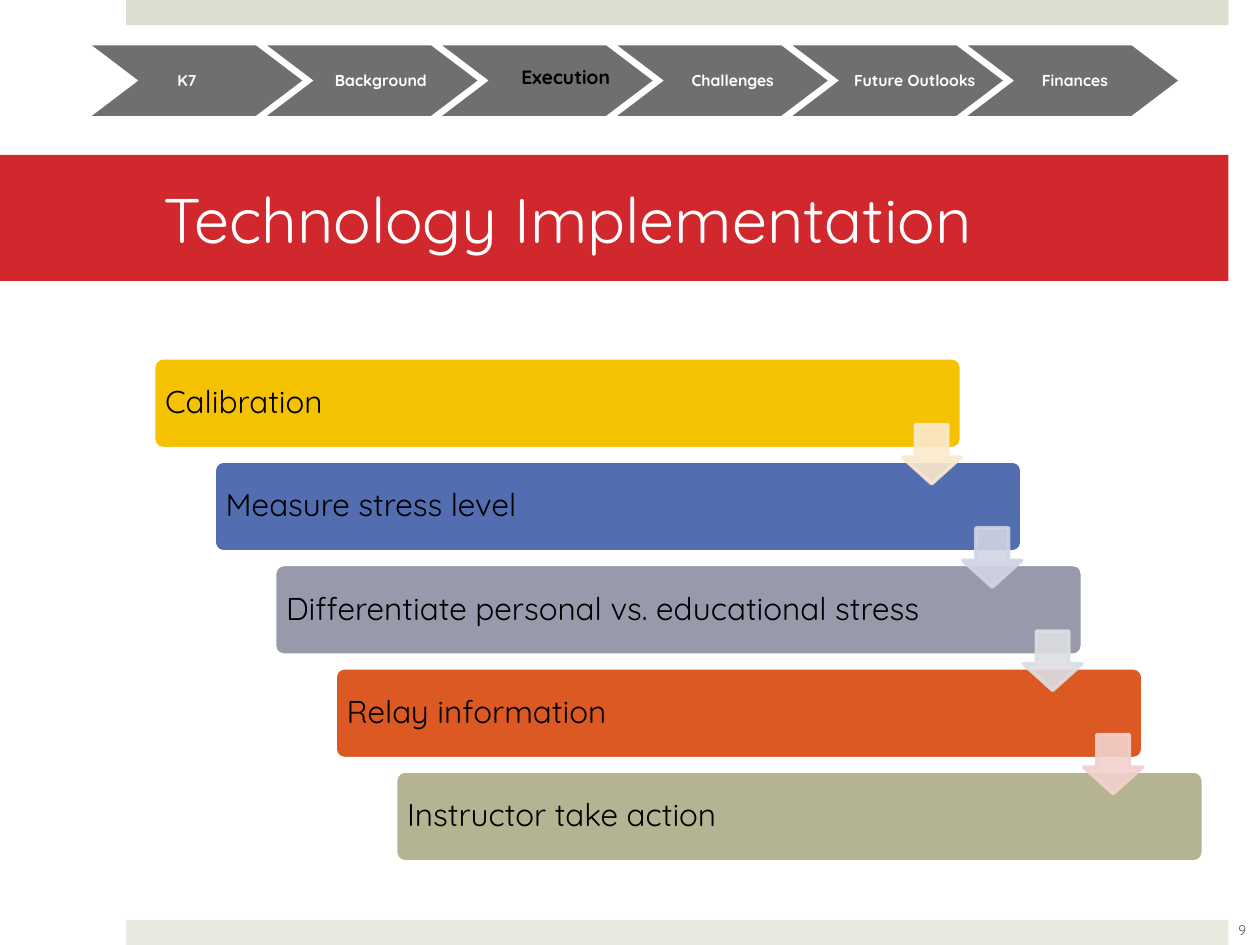
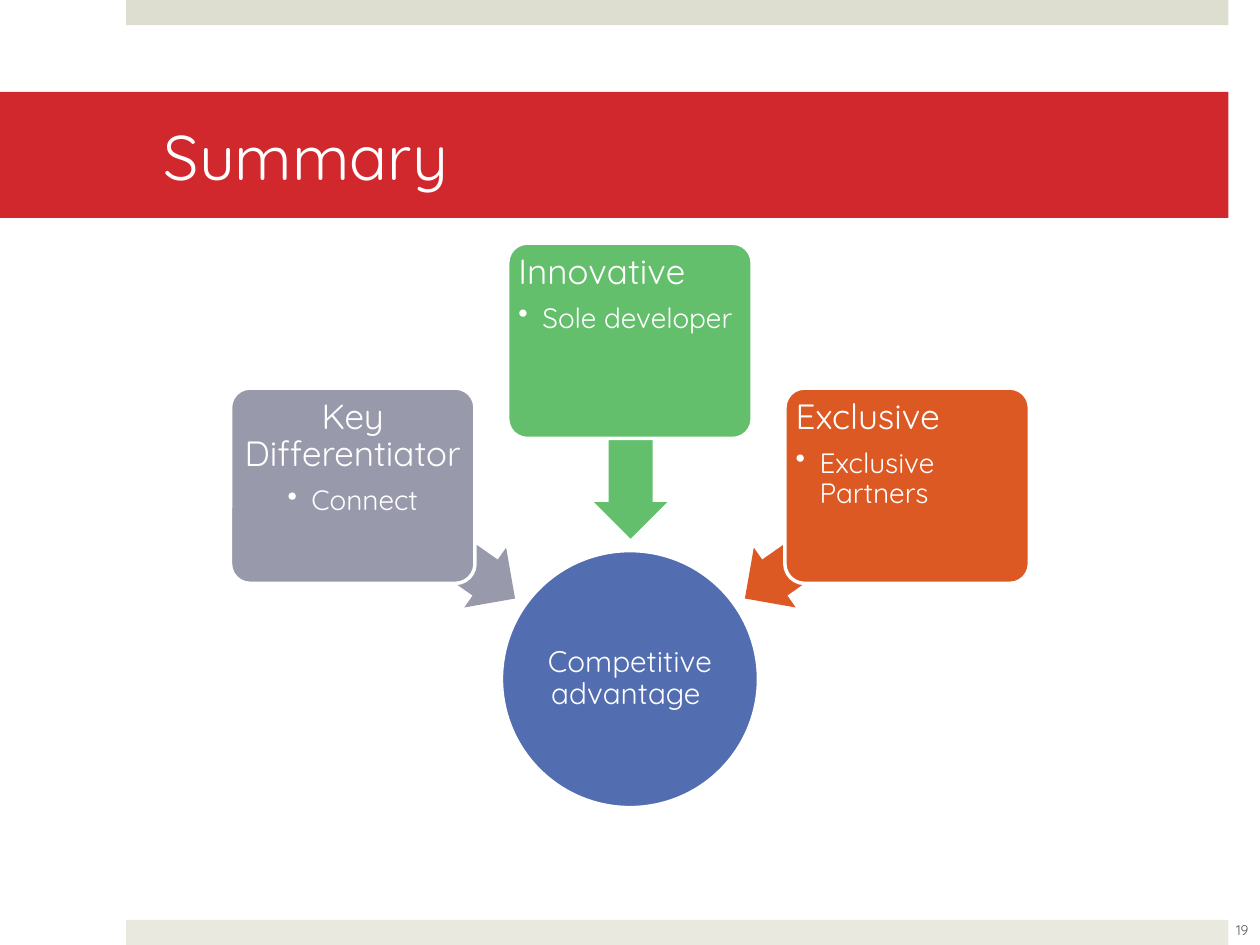
from dataclasses import dataclass

import lxml.etree
import pptx
import pptx.dml.color
import pptx.enum.shapes
import pptx.enum.text
import pptx.oxml.ns
import pptx.util

Inches = pptx.util.Inches
Pt = pptx.util.Pt
MSO = pptx.enum.shapes.MSO_SHAPE
ALIGN = pptx.enum.text.PP_ALIGN
ANCHOR = pptx.enum.text.MSO_ANCHOR
qn = pptx.oxml.ns.qn


@dataclass(frozen=True)
class Theme:
    font: str = "Quicksand"
    white: str = "FFFFFF"
    black: str = "000000"
    top_band: str = "DEDED0"
    bottom_band: str = "E9E9E0"
    red: str = "D1282E"
    chevron: str = "6F6F6F"
    number: str = "595959"
    yellow: str = "F5C201"
    blue: str = "526DB0"
    lilac: str = "989AAC"
    orange: str = "DC5924"
    olive: str = "B4B392"
    green: str = "63BF6C"
    step_arrows: tuple = ("FBE9CC", "D1D4E4", "DDDEE3", "F2D1CD")
    title_size: int = 36
    step_size: int = 18
    circle_size: int = 17
    heading_size: int = 20
    bullet_size: int = 16
    nav_size: int = 9
    nav_active_size: int = 11
    number_size: int = 8


THEME = Theme()


def rgb(color):
    return pptx.dml.color.RGBColor.from_string(color)


def set_attrs(obj, **values):
    for name, value in values.items():
        setattr(obj, name, value)


def set_frame(tf, insets, anchor):
    """Insets run left, top, right, bottom in inches."""
    sides = ("margin_left", "margin_top", "margin_right", "margin_bottom")
    set_attrs(tf, word_wrap=True, vertical_anchor=anchor,
              **{side: Inches(v) for side, v in zip(sides, insets)})


def write(p, text, size, color, bold=False, align=ALIGN.LEFT, **spacing):
    set_attrs(p, alignment=align, **spacing)
    r = p.add_run()
    r.text = text
    set_attrs(r.font, name=THEME.font, size=Pt(size), bold=bold)
    r.font.color.rgb = rgb(color)


def add_shape(s, kind, box, fill, outline=None, adj=(), rotation=0):
    sp = s.shapes.add_shape(kind, *map(Inches, box))
    sp.shadow.inherit = False
    sp.rotation = rotation
    sp.fill.solid()
    sp.fill.fore_color.rgb = rgb(fill)
    if outline:
        sp.line.color.rgb = rgb(outline)
        sp.line.width = Pt(2)
    else:
        sp.line.fill.background()
    for i, value in enumerate(adj):
        sp.adjustments[i] = value
    return sp


def add_text(s, box, text, size, color, anchor=ANCHOR.TOP, **style):
    tf = s.shapes.add_textbox(*map(Inches, box)).text_frame
    set_frame(tf, (0.1, 0.05, 0.1, 0.05), anchor)
    write(tf.paragraphs[0], text, size, color, **style)


def set_opacity(sp, percent):
    """Apply the opacity to both the fill and the outline."""
    for clr in sp._element.spPr.iter(qn("a:srgbClr")):
        lxml.etree.SubElement(clr, qn("a:alpha"), val=str(percent * 1000))


def add_bullet(p, indent):
    pPr = p._p.get_or_add_pPr()
    pPr.set("marL", str(Inches(indent)))
    pPr.set("indent", str(-Inches(indent)))
    lxml.etree.SubElement(pPr, qn("a:buChar"), char="•")


def new_slide(prs, title, title_top, number):
    s = prs.slides.add_slide(prs.slide_layouts[5])
    add_shape(s, MSO.RECTANGLE, (1, 0, 8.75, 0.2), THEME.top_band)
    add_shape(s, MSO.RECTANGLE, (1, 7.3, 8.75, 0.2), THEME.bottom_band)
    sp = s.shapes.title
    set_attrs(sp, left=Inches(0), top=Inches(title_top),
              width=Inches(9.75), height=Inches(1))
    sp.fill.solid()
    sp.fill.fore_color.rgb = rgb(THEME.red)
    tf = sp.text_frame
    tf.auto_size = pptx.enum.text.MSO_AUTO_SIZE.NONE
    set_frame(tf, (1.3, 0.05, 0.3, 0.05), ANCHOR.MIDDLE)
    write(tf.paragraphs[0], title, THEME.title_size, THEME.white)
    add_text(s, (9.61, 7.18, 0.5, 0.4), str(number), THEME.number_size,
             THEME.number, ANCHOR.MIDDLE, align=ALIGN.CENTER)
    return s


def add_navigation(s, active):
    sections = [("K7", 1.31), ("Background", 2.56), ("Execution", 4.04),
                ("Challenges", 5.39), ("Future Outlooks", 6.68),
                ("Finances", 8.17)]
    for i, (name, label_left) in enumerate(sections):
        add_shape(s, MSO.CHEVRON, (0.73 + 1.39 * i, 0.36, 1.67, 0.56),
                  THEME.chevron, adj=[0.66])
        if name == active:
            top, size, color = 0.47, THEME.nav_active_size, THEME.black
        else:
            top, size, color = 0.51, THEME.nav_size, THEME.white
        add_text(s, (label_left, top, 1.48, 0.27), name, size, color,
                 bold=True)


def add_staircase(s, steps):
    """Step bars to the right and down, with an arrow from each to the next."""
    left, top, width, height, arrow = 1.22, 2.84, 6.41, 0.72, 0.47
    corners = [(left + 0.48 * i, top + 0.82 * i) for i in range(len(steps))]
    for (x, y), (text, fill) in zip(corners, steps):
        sp = add_shape(s, MSO.ROUNDED_RECTANGLE, (x, y, width, height), fill,
                       THEME.white, adj=[0.1])
        set_frame(sp.text_frame, [0.07] * 4, ANCHOR.MIDDLE)
        write(sp.text_frame.paragraphs[0], text, THEME.step_size, THEME.black,
              line_spacing=0.9)
    for (x, y), color in zip(corners, THEME.step_arrows):
        sp = add_shape(s, MSO.DOWN_ARROW,
                       (x + width - arrow, y + 0.53, arrow, arrow),
                       color, color, adj=[0.55, 0.45])
        set_opacity(sp, 90)


def add_circle(s, box, text):
    sp = add_shape(s, MSO.OVAL, box, THEME.blue, THEME.white)
    set_frame(sp.text_frame, [0.01] * 4, ANCHOR.MIDDLE)
    write(sp.text_frame.paragraphs[0], text, THEME.circle_size, THEME.white,
          align=ALIGN.CENTER, line_spacing=0.9)


def add_card(s, corner, fill, heading, bullet, align=ALIGN.LEFT):
    sp = add_shape(s, MSO.ROUNDED_RECTANGLE, (*corner, 1.94, 1.55), fill,
                   THEME.white, adj=[0.1])
    tf = sp.text_frame
    set_frame(tf, [0.04] * 4, ANCHOR.TOP)
    write(tf.paragraphs[0], heading, THEME.heading_size, THEME.white,
          align=align, line_spacing=0.9, space_after=Pt(7))
    p = tf.add_paragraph()
    add_bullet(p, 0.19)
    write(p, bullet, THEME.bullet_size, THEME.white, align=align,
          line_spacing=0.9)


def add_pointer(s, corner, rotation, fill):
    add_shape(s, MSO.LEFT_ARROW, (*corner, 1.57, 0.58), fill,
              adj=[0.6, 0.5], rotation=rotation)


def build_implementation(prs):
    s = new_slide(prs, "Technology Implementation", 1.23, 9)
    add_staircase(s, [
        ("Calibration", THEME.yellow),
        ("Measure stress level", THEME.blue),
        ("Differentiate personal vs. educational stress", THEME.lilac),
        ("Relay information", THEME.orange),
        ("Instructor take action", THEME.olive),
    ])
    add_navigation(s, "Execution")


def build_summary(prs):
    s = new_slide(prs, "Summary", 0.73, 19)
    add_circle(s, (3.98, 4.37, 2.04, 2.04), "Competitive advantage ")
    add_pointer(s, (2.66, 4.01), 215, THEME.lilac)
    add_card(s, (1.83, 3.08), THEME.lilac, "Key Differentiator", "Connect",
             ALIGN.CENTER)
    add_pointer(s, (4.22, 3.2), 270, THEME.green)
    add_card(s, (4.03, 1.93), THEME.green, "Innovative", "Sole developer")
    add_pointer(s, (5.77, 4.01), 325, THEME.orange)
    add_card(s, (6.23, 3.08), THEME.orange, "Exclusive", "Exclusive Partners")


def main():
    prs = pptx.Presentation()
    set_attrs(prs, slide_width=Inches(10), slide_height=Inches(7.5))
    build_implementation(prs)
    build_summary(prs)
    prs.save("out.pptx")


if __name__ == "__main__":
    main()
